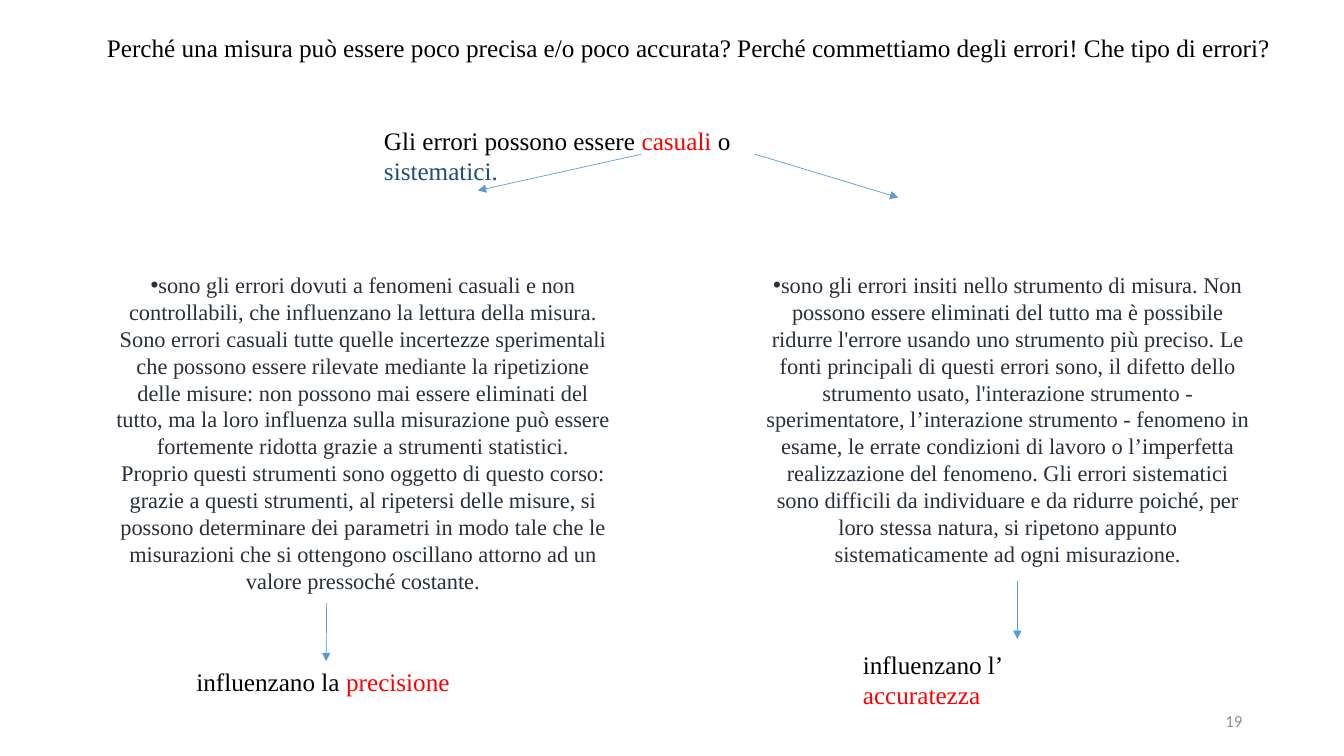
from lxml.etree import SubElement
from pptx import Presentation
from pptx.dml.color import RGBColor
from pptx.enum.shapes import MSO_CONNECTOR
from pptx.enum.text import MSO_ANCHOR, MSO_AUTO_SIZE, PP_ALIGN
from pptx.oxml.ns import qn
from pptx.util import Pt

PX = 9144  # 100 px to the inch
BLACK, RED, NAVY, SLATE, GRAY, BLUE = (
    "000000", "FF0000", "1F4E79", "292F40", "8C8C8C", "5B9BD5")

CASUALI = (
    "sono gli errori dovuti a fenomeni casuali e non controllabili, che "
    "influenzano la lettura della misura. Sono errori casuali tutte quelle "
    "incertezze sperimentali che possono essere rilevate mediante la "
    "ripetizione delle misure: non possono mai essere eliminati del tutto, ma "
    "la loro influenza sulla misurazione può essere fortemente ridotta grazie "
    "a strumenti statistici.\n"
    "Proprio questi strumenti sono oggetto di questo corso: grazie a questi "
    "strumenti, al ripetersi delle misure, si possono determinare dei "
    "parametri in modo tale che le misurazioni che si ottengono oscillano "
    "attorno ad un valore pressoché costante.")
SISTEMATICI = (
    "sono gli errori insiti nello strumento di misura. Non possono essere "
    "eliminati del tutto ma è possibile ridurre l'errore usando uno strumento "
    "più preciso. Le fonti principali di questi errori sono, il difetto dello "
    "strumento usato, l'interazione strumento - sperimentatore, l’interazione "
    "strumento - fenomeno in esame, le errate condizioni di lavoro o "
    "l’imperfetta realizzazione del fenomeno. Gli errori sistematici sono "
    "difficili da individuare e da ridurre poiché, per loro stessa natura, si "
    "ripetono appunto sistematicamente ad ogni misurazione.")


def rgb(value):
    return RGBColor.from_string(value)


def assign(obj, values):
    for name, value in values.items():
        setattr(obj, name, value)


class Deck:
    font = "Times New Roman"

    def __init__(self, width, height):
        self.prs = Presentation()
        assign(self.prs, {"slide_width": width * PX, "slide_height": height * PX})
        self.s = self.prs.slides.add_slide(self.prs.slide_layouts[3])

    def fill_text(self, sp, box, runs, size=18, align=PP_ALIGN.LEFT,
                  anchor=MSO_ANCHOR.TOP, font=None, right=10):
        """Place a shape and write (text, colour) runs; right is its right inset."""
        names = ("left", "top", "width", "height")
        assign(sp, {name: px * PX for name, px in zip(names, box)})
        tf = sp.text_frame
        assign(tf, {"word_wrap": True, "auto_size": MSO_AUTO_SIZE.NONE,
                    "vertical_anchor": anchor, "margin_right": right * PX})
        p = tf.paragraphs[0]
        assign(p, {"alignment": align, "space_before": Pt(0),
                   "line_spacing": Pt(size * 1.2)})
        for text, color in runs:
            for i, line in enumerate(text.split("\n")):
                if i:
                    p.add_line_break()
                r = p.add_run()
                r.text = line
                assign(r.font, {"name": font or self.font, "size": Pt(size)})
                r.font.color.rgb = rgb(color)
        return sp

    def title(self, box, text):
        return self.fill_text(self.s.shapes.title, box, [(text, BLACK)])

    def body(self, idx, box, text):
        sp = self.fill_text(self.s.placeholders[idx], box, [(text, SLATE)],
                            size=16, align=PP_ALIGN.CENTER)
        pPr = sp.text_frame.paragraphs[0]._p.get_or_add_pPr()
        for name in ("marL", "indent"):
            pPr.set(name, "0")
        SubElement(pPr, qn("a:buChar")).set("char", "•")
        return sp

    def text(self, box, runs, **style):
        return self.fill_text(self.s.shapes.add_textbox(0, 0, 0, 0), box, runs, **style)

    def arrow(self, x1, y1, x2, y2, target=None):
        line = self.s.shapes.add_connector(
            MSO_CONNECTOR.STRAIGHT, *(v * PX for v in (x1, y1, x2, y2)))
        line.line.width = Pt(0.5)
        line.line.color.rgb = rgb(BLUE)
        SubElement(line.line._get_or_add_ln(), qn("a:tailEnd")).set("type", "triangle")
        SubElement(line._element.spPr, qn("a:effectLst"))
        if target is not None:
            line.end_connect(target, 0)


def main():
    d = Deck(1333, 750)
    d.title((96, 27, 1230, 40),
            "Perché una misura può essere poco precisa e/o poco accurata? "
            "Perché commettiamo degli errori! Che tipo di errori?")
    d.text((371, 119, 468, 40),
           [("Gli errori possono essere ", BLACK), ("casuali", RED),
            (" o ", BLACK), ("sistematici.", NAVY)], right=80)
    d.body(1, (104, 264, 512, 333), CASUALI)
    d.body(2, (749, 264, 501, 306), SISTEMATICI)
    precision = d.text((104, 656, 439, 40),
                       [("influenzano la ", BLACK), ("precisione ", RED)],
                       align=PP_ALIGN.CENTER)
    d.text((846, 639, 269, 40),
           [("influenzano l’ ", BLACK), ("accuratezza", RED)], right=100)
    d.text((942, 695, 300, 40), [("19", GRAY)], size=12, font="Calibri",
           align=PP_ALIGN.RIGHT, anchor=MSO_ANCHOR.MIDDLE)
    d.arrow(636, 153, 474, 189)
    d.arrow(749, 153, 891, 196)
    d.arrow(324, 598, 324, 656, target=precision)
    d.arrow(1009, 576, 1009, 634)
    d.prs.save("out.pptx")


if __name__ == "__main__":
    main()
